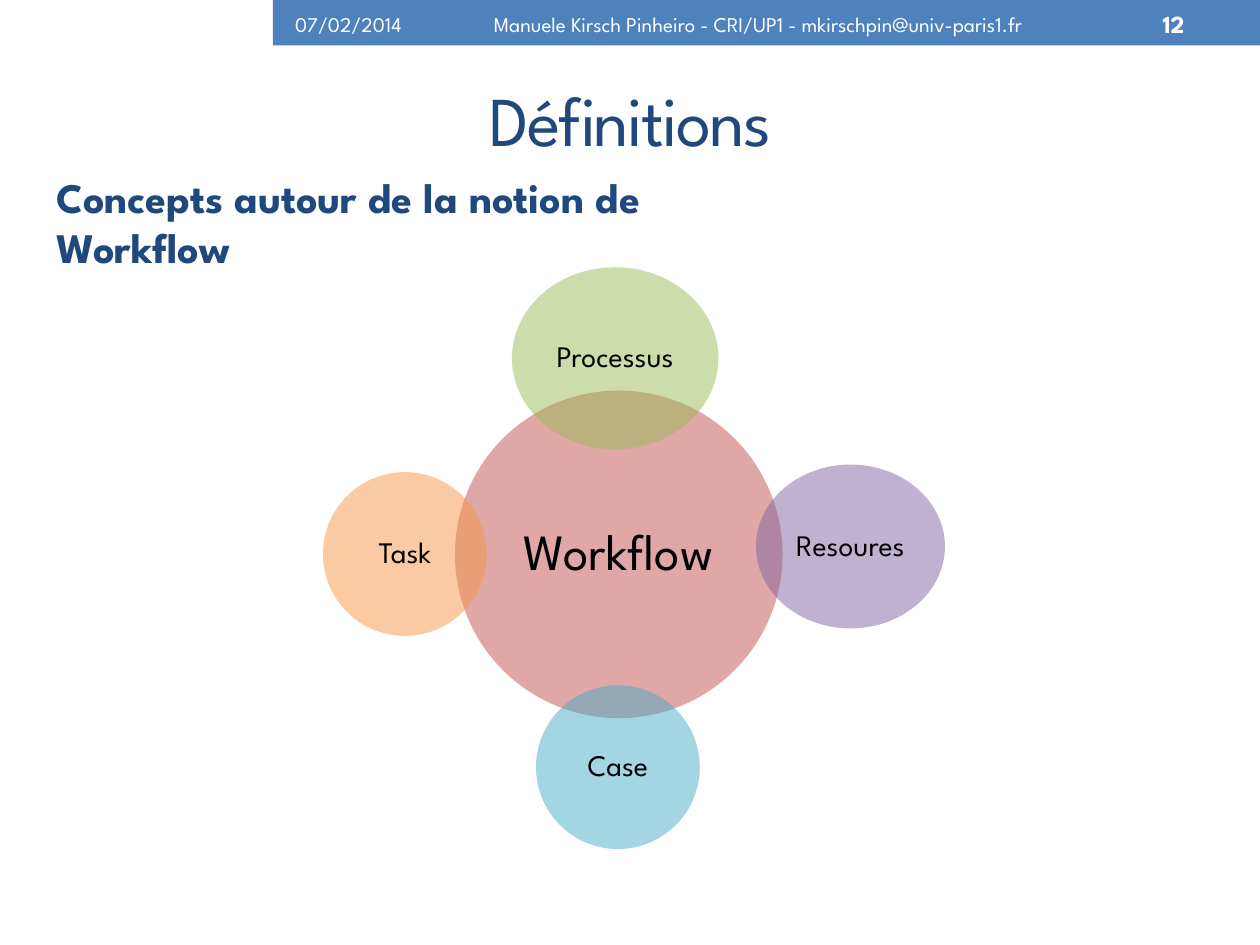
from lxml.etree import SubElement
from pptx import Presentation
from pptx.dml.color import RGBColor
from pptx.enum.shapes import MSO_SHAPE
from pptx.enum.text import MSO_ANCHOR, PP_ALIGN
from pptx.oxml.ns import qn
from pptx.util import Pt

NAVY, WHITE, BLACK = "1F497D", "FFFFFF", "000000"


def write(shape, text, size, color, bold=False, align=PP_ALIGN.LEFT,
          anchor=MSO_ANCHOR.MIDDLE, spacing=None):
    frame = shape.text_frame
    frame.word_wrap = True
    frame.vertical_anchor = anchor
    para = frame.paragraphs[0]
    para.alignment = align
    para.line_spacing = spacing
    span = para.add_run()
    span.text = text
    span.font.name = "League Spartan"
    span.font.size = Pt(size)
    span.font.bold = bold
    span.font.color.rgb = RGBColor.from_string(color)
    return span


def paint(shape, color, opacity=100):
    shape.shadow.inherit = False
    shape.line.fill.background()
    shape.fill.solid()
    shape.fill.fore_color.rgb = RGBColor.from_string(color)
    if opacity < 100:
        fill_color = shape.fill._xPr.find(qn("a:solidFill"))[0]
        SubElement(fill_color, qn("a:alpha"), val=str(opacity * 1000))


deck = Presentation()
deck.slide_width, deck.slide_height = Pt(720), Pt(540)
page = deck.slides.add_slide(deck.slide_layouts[5])

# Header band
band = page.shapes.add_shape(MSO_SHAPE.RECTANGLE, Pt(156), Pt(0), Pt(564), Pt(26))
paint(band, "4F81BD")

# Title
title = page.shapes.title
title.left, title.top, title.width, title.height = Pt(36.5), Pt(32), Pt(647.5), Pt(72)
span = write(title, "Définitions", 40, NAVY, align=PP_ALIGN.CENTER)
span._r.get_or_add_rPr().set("spc", "-100")

# Workflow circle, with its related concepts around it
circles = [
    ("Workflow", 260, 223.2, 187.2, 187.2, "C0504D", 29, 3),
    ("Processus", 292.5, 152.7, 118, 104, "9BBB59", 17, 1.5),
    ("Resoures", 432, 265.5, 108, 93.6, "8064A2", 17, 1.5),
    ("Case", 306.3, 391.6, 93.6, 93.6, "4BACC6", 17, 1.5),
    ("Task", 184.6, 269.8, 93.6, 93.6, "F79646", 17, 1.5),
]
diagram = page.shapes.add_group_shape()
for name, left, top, width, height, color, size, inset in circles:
    circle = diagram.shapes.add_shape(
        MSO_SHAPE.OVAL, Pt(left), Pt(top), Pt(width), Pt(height))
    paint(circle, color, opacity=50)
    write(circle, name, size, BLACK, align=PP_ALIGN.CENTER, spacing=0.9)
    frame = circle.text_frame
    frame.margin_left = frame.margin_right = Pt(inset)
    frame.margin_top = frame.margin_bottom = Pt(inset)

# Subtitle
box = page.shapes.add_textbox(Pt(25), Pt(94.5), Pt(441), Pt(36))
write(box, "Concepts autour de la notion de Workflow", 24, NAVY, bold=True,
      anchor=MSO_ANCHOR.TOP)

# Date, author and page number in the header band
header = [
    ("07/02/2014", 161.5, 79, 12, False, PP_ALIGN.LEFT),
    ("Manuele Kirsch Pinheiro - CRI/UP1 - mkirschpin@univ-paris1.fr",
     229.5, 408, 12, False, PP_ALIGN.CENTER),
    ("12", 643.5, 40.5, 14, True, PP_ALIGN.RIGHT),
]
for text, left, width, size, bold, align in header:
    box = page.shapes.add_textbox(Pt(left), Pt(1.5), Pt(width), Pt(24.5))
    write(box, text, size, WHITE, bold=bold, align=align)

deck.save("out.pptx")
